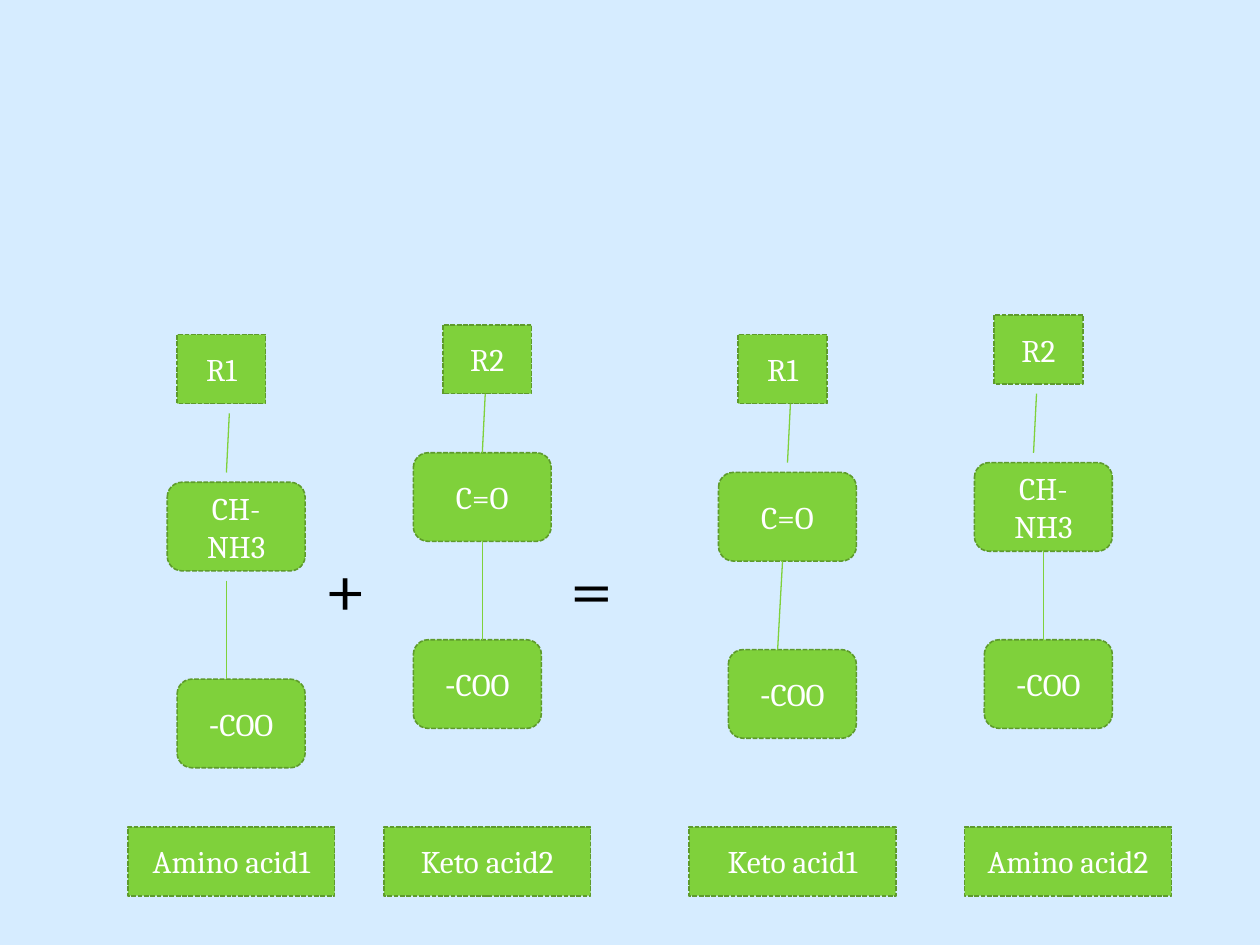
from typing import NamedTuple

from lxml import etree
from pptx import Presentation
from pptx.dml.color import RGBColor
from pptx.enum import dml, shapes, text
from pptx.oxml import ns
from pptx.util import Inches, Pt

COLS, ROWS = 128, 96
FONT = "Cambria"
GREEN, EDGE, SKY, WHITE, BLACK = "7FD13B", "5E9B2C", "D6ECFF", "FFFFFF", "000000"
RECT = shapes.MSO_SHAPE.RECTANGLE
ROUND = shapes.MSO_SHAPE.ROUNDED_RECTANGLE


class Box(NamedTuple):
    label: str
    x: float
    y: float
    w: float
    h: float
    form: int


class Bond(NamedTuple):
    x1: float
    y1: float
    x2: float
    y2: float


class Acid(NamedTuple):
    name: str
    left: float
    top: Box
    core: Box
    tail: Box
    bonds: tuple


class Sign(NamedTuple):
    label: str
    x: float
    y: float


def side(label: str, x: float, y: float) -> Box:
    return Box(label, x, y, 9, 7, RECT)


def core(label: str, x: float, y: float) -> Box:
    return Box(label, x, y, 14, 9, ROUND)


def tail(x: float, y: float) -> Box:
    return Box("COO-", x, y, 13, 9, ROUND)


ACIDS = [
    Acid("Amino acid1", 13, side("R1", 18, 34), core("CH-NH3", 17, 49), tail(18, 69),
         (Bond(23.3, 42, 23, 48), Bond(23, 59, 23, 69))),
    Acid("Keto acid2", 39, side("R2", 45, 33), core("C=O", 42, 46), tail(42, 65),
         (Bond(49.3, 40, 49, 46), Bond(49, 55, 49, 65))),
    Acid("Keto acid1", 70, side("R1", 75, 34), core("C=O", 73, 48), tail(74, 66),
         (Bond(80.3, 41, 80, 47), Bond(79.5, 57, 79, 66))),
    Acid("Amino acid2", 98, side("R2", 101, 32), core("CH-NH3", 99, 47), tail(100, 65),
         (Bond(105.3, 40, 105, 46), Bond(106, 56, 106, 66))),
]
SIGNS = [Sign("+", 35.1, 59.5), Sign("=", 60.1, 59.5)]

deck = Presentation()
deck.slide_width, deck.slide_height = Inches(10), Inches(7.5)
slide = deck.slides.add_slide(deck.slide_layouts[6])


def hue(code: str) -> RGBColor:
    return RGBColor.from_string(code)


def col(n: float) -> int:
    return round(deck.slide_width * n / COLS)


def row(n: float) -> int:
    return round(deck.slide_height * n / ROWS)


def write(shape, label: str, size: float, color: str, rtl: bool = False) -> None:
    frame = shape.text_frame
    frame.word_wrap = True
    frame.vertical_anchor = text.MSO_ANCHOR.MIDDLE
    para = frame.paragraphs[0]
    para.text = label
    para.alignment = text.PP_ALIGN.CENTER
    para.font.name, para.font.size = FONT, Pt(size)
    para.font.color.rgb = hue(color)
    if rtl:
        para._p.get_or_add_pPr().set("rtl", "1")


def draw_box(box: Box):
    shape = slide.shapes.add_shape(box.form, col(box.x), row(box.y), col(box.w), row(box.h))
    shape.shadow.inherit = False
    shape.fill.solid()
    shape.fill.fore_color.rgb = hue(GREEN)
    shape.line.color.rgb = hue(EDGE)
    shape.line.width = Pt(0.9)
    shape.line.dash_style = dml.MSO_LINE.SQUARE_DOT
    write(shape, box.label, 18, WHITE, rtl=True)
    return shape


def draw_bond(bond: Bond, box: Box, shape) -> None:
    line = slide.shapes.add_connector(shapes.MSO_CONNECTOR.STRAIGHT, col(bond.x1),
                                      row(bond.y1), col(bond.x2), row(bond.y2))
    line.line.color.rgb = hue(GREEN)
    line.line.width = Pt(0.75)
    etree.SubElement(line._element.spPr, ns.qn("a:effectLst"))
    mid = box.x + box.w / 2
    if (bond.x1, bond.y1) == (mid, box.y + box.h):
        line.begin_connect(shape, 2)
    if (bond.x2, bond.y2) == (mid, box.y):
        line.end_connect(shape, 0)


def draw_acid(acid: Acid) -> None:
    draw_box(acid.top)
    hub = draw_box(acid.core)
    draw_box(acid.tail)
    for bond in acid.bonds:
        draw_bond(bond, acid.core, hub)
    draw_box(Box(acid.name, acid.left, 84, 21, 7, RECT))


def draw_sign(sign: Sign) -> None:
    w, h = 10, 12
    shape = slide.shapes.add_textbox(col(sign.x - w / 2), row(sign.y - h / 2), col(w), row(h))
    write(shape, sign.label, 44, BLACK)


def main() -> None:
    slide.background.fill.solid()
    slide.background.fill.fore_color.rgb = hue(SKY)
    for sign in SIGNS:
        draw_sign(sign)
    for acid in ACIDS:
        draw_acid(acid)
    deck.save("out.pptx")


if __name__ == "__main__":
    main()
